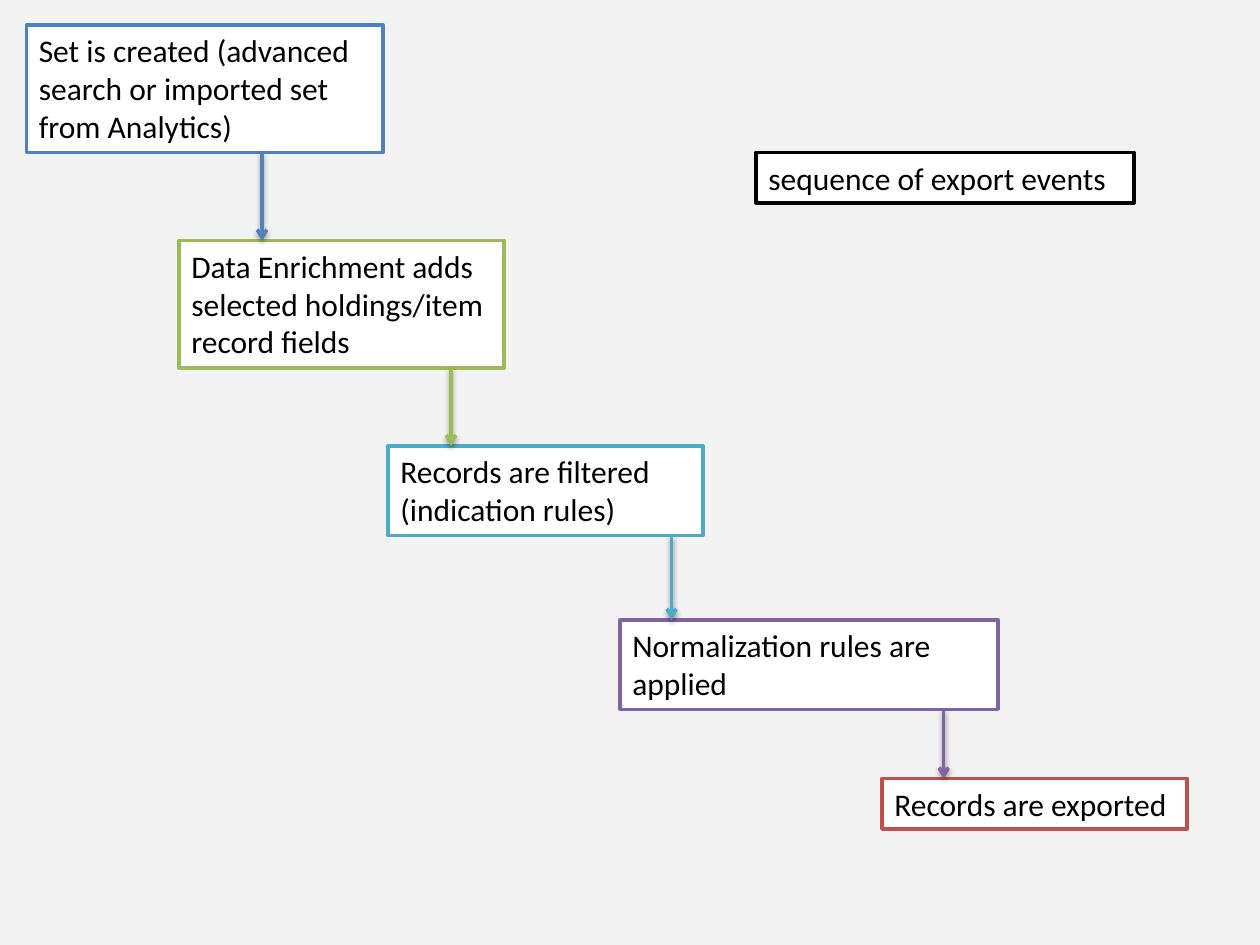
from lxml import etree
from pptx import Presentation
from pptx.dml.color import RGBColor
from pptx.enum.shapes import MSO_CONNECTOR
from pptx.enum.text import MSO_AUTO_SIZE
from pptx.oxml import parse_xml
from pptx.oxml.ns import nsdecls, qn
from pptx.util import Inches, Pt

COLORS = {
    "background": "F2F2F2", "white": "FFFFFF", "black": "000000",
    "blue": "4F81BD", "green": "9BBB59", "teal": "4BACC6",
    "purple": "8064A2", "red": "C0504D",
}

# Each step: text, colour, (left, top, width, height), x of the arrow below it
STEPS = [
    ("Set is created (advanced search or imported set from Analytics)",
     "blue", (0.21, 0.2, 2.83, 1.01), 2.08),
    ("Data Enrichment adds selected holdings/item record fields",
     "green", (1.42, 1.91, 2.58, 1.01), 3.58),
    ("Records are filtered (indication rules)",
     "teal", (3.08, 3.54, 2.5, 0.71), 5.33),
    ("Normalization rules are applied",
     "purple", (4.92, 4.92, 3, 0.71), 7.49),
    ("Records are exported",
     "red", (7, 6.18, 2.42, 0.4), None),
]


def rgb(name):
    return RGBColor.from_string(COLORS[name])


def add_box(s, text, color, box):
    """White text box with a coloured outline."""
    sp = s.shapes.add_textbox(*(Inches(v) for v in box))
    sp.fill.solid()
    sp.fill.fore_color.rgb = rgb("white")
    sp.line.color.rgb = rgb(color)
    sp.line.width = Pt(2)
    tf = sp.text_frame
    tf.text = text
    tf.word_wrap = True
    tf.auto_size = MSO_AUTO_SIZE.SHAPE_TO_FIT_TEXT
    font = tf.paragraphs[0].runs[0].font
    font.name, font.size = "Calibri", Pt(18)
    font.color.rgb = rgb("black")


def add_arrow(s, color, x, top, bottom):
    """Vertical arrow with a soft shadow below it."""
    line = s.shapes.add_connector(
        MSO_CONNECTOR.STRAIGHT, Inches(x), Inches(top), Inches(x), Inches(bottom))
    line.line.color.rgb = rgb(color)
    line.line.width = Pt(2)
    etree.SubElement(line.line._get_or_add_ln(), qn("a:tailEnd"), type="arrow")
    line._element.spPr.append(parse_xml(
        f'<a:effectLst {nsdecls("a")}>'
        f'<a:outerShdw blurRad="{Pt(3.1)}" dist="{Pt(1.6)}" dir="5400000" rotWithShape="0">'
        f'<a:srgbClr val="{COLORS["black"]}"><a:alpha val="38000"/></a:srgbClr>'
        '</a:outerShdw></a:effectLst>'))


def add_flow(s, steps):
    """Staircase of steps, each joined to the next by an arrow."""
    for text, color, box, _ in steps:
        add_box(s, text, color, box)
    for (_, color, box, x), (_, _, next_box, _) in zip(steps, steps[1:]):
        add_arrow(s, color, x, box[1] + box[3], next_box[1])


def main():
    prs = Presentation()
    prs.slide_width, prs.slide_height = Inches(10), Inches(7.5)
    s = prs.slides.add_slide(prs.slide_layouts[6])
    s.background.fill.solid()
    s.background.fill.fore_color.rgb = rgb("background")

    # Caption
    add_box(s, "sequence of export events", "black", (6, 1.21, 3, 0.4))
    # Export steps
    add_flow(s, STEPS)

    prs.save("out.pptx")


if __name__ == "__main__":
    main()
